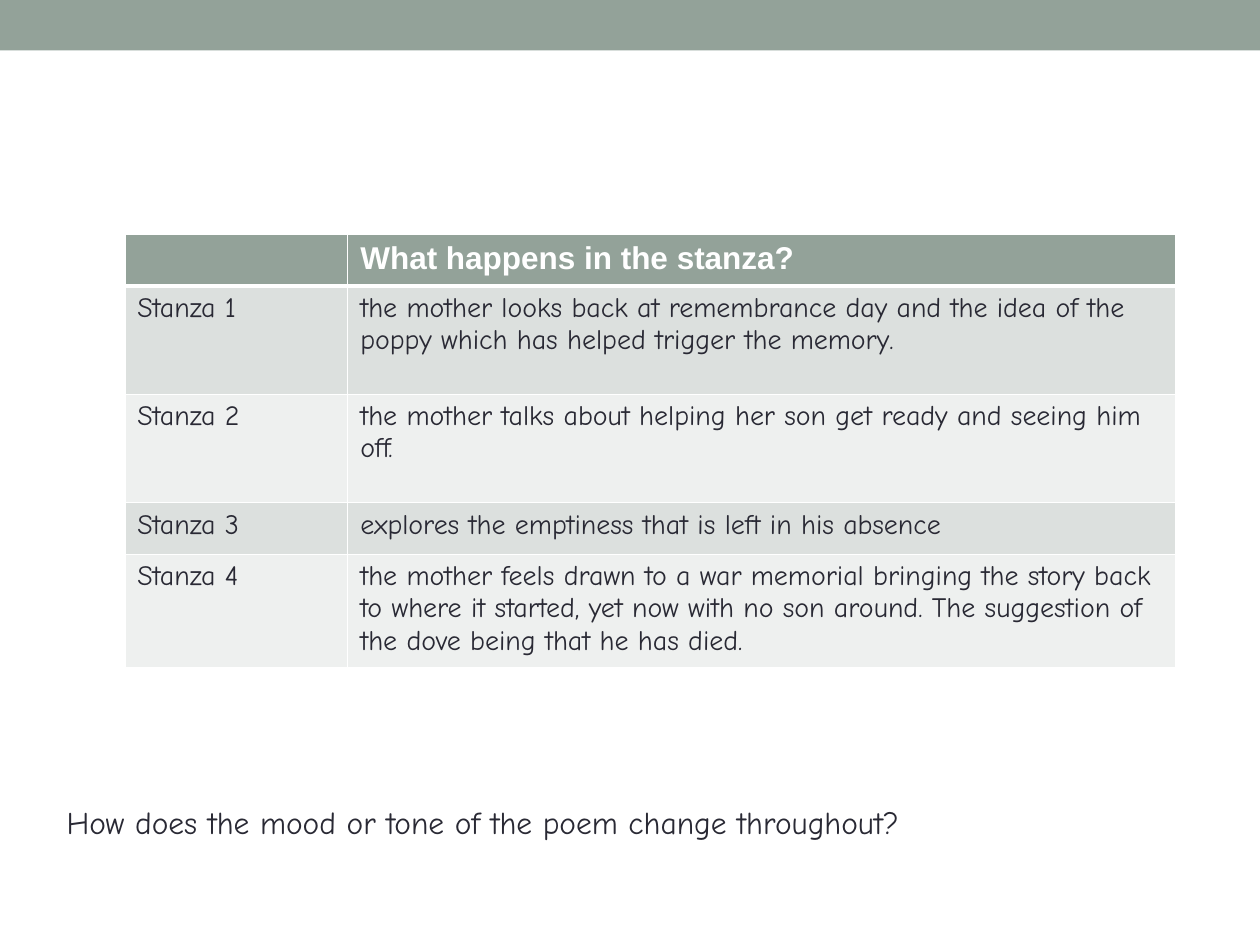
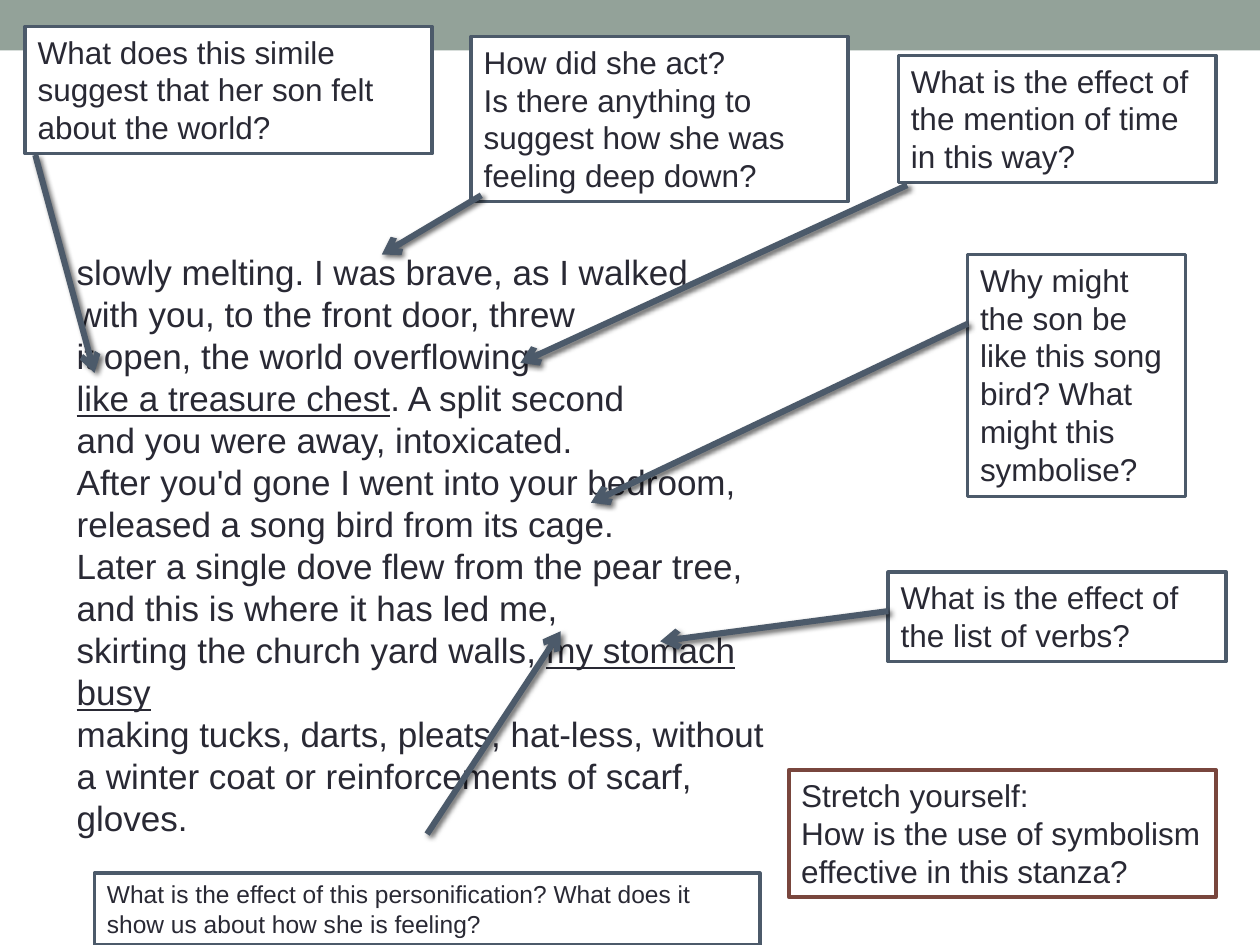
from typing import NamedTuple, Optional

from lxml import etree
from pptx import Presentation
from pptx import util as u
from pptx.dml.color import RGBColor
from pptx.enum import shapes, text
from pptx.oxml import ns

PX = 9144  # EMU per px, 100 px to the inch
SLIDE_W, SLIDE_H = 1000, 750
SAGE, SLATE, RUST, INK, WHITE = "93A299", "4C5A6A", "79463D", "292934", "FFFFFF"
ROW_FILLS = ("DCE0DE", "EEF0EF")
SANS, HAND = "Arial", "Comic Neue"


class Box(NamedTuple):
    x: int
    y: int
    w: int
    h: int

    def emu(self) -> list[u.Emu]:
        return [px(v) for v in self]


class Arrow(NamedTuple):
    x1: int
    y1: int
    x2: int
    y2: int


class Question(NamedTuple):
    words: str
    box: Box
    arrow: Optional[Arrow] = None
    size: int = 18
    line: str = SLATE


class Passage(NamedTuple):
    words: str
    underline: bool = False


STANZAS = [
    ("Stanza 1", "the mother looks back at remembrance day and the idea of the poppy "
                 "which has helped trigger the memory."),
    ("Stanza 2", "the mother talks about helping her son get ready and seeing him off."),
    ("Stanza 3", "explores the emptiness that is left in his absence"),
    ("Stanza 4", "the mother feels drawn to a war memorial bringing the story back to where "
                 "it started, yet now with no son around. The suggestion of the dove being "
                 "that he has died."),
]
TABLE_BOX = Box(99, 186, 834, 340)
COLUMN_WIDTHS = (177, 657)
ROW_HEIGHTS = (41, 86, 86, 41, 86)

POEM = [
    Passage("slowly melting. I was brave, as I walked\nwith you, to the front door, threw\n"
            "it open, the world overflowing\n"),
    Passage("like a treasure chest", True),
    Passage(". A split second\nand you were away, intoxicated.\n"
            "After you'd gone I went into your bedroom,\nreleased a song bird from its cage.\n"
            "Later a single dove flew from the pear tree,\nand this is where it has led me,\n"
            "skirting the church yard walls, "),
    Passage("my stomach busy\n", True),
    Passage("making tucks, darts, pleats, hat-less, without\n"
            "a winter coat or reinforcements of scarf, gloves."),
]

QUESTIONS = [
    Question("What does this simile suggest that her son felt about the world?",
             Box(20, 21, 323, 101), Arrow(28, 123, 75, 296)),
    Question("How did she act?\nIs there anything to suggest how she was feeling deep down?",
             Box(374, 29, 299, 131), Arrow(382, 155, 303, 202)),
    Question("What is the effect of the mention of time in this way?",
             Box(713, 44, 252, 101), Arrow(720, 147, 413, 288)),
    Question("Why might the son be like this song bird? What might this symbolise?",
             Box(768, 202, 173, 192), Arrow(768, 257, 469, 399)),
    Question("What is the effect of the list of verbs?",
             Box(705, 454, 268, 71), Arrow(705, 485, 524, 509)),
    Question("What is the effect of this personification? What does it show us about how "
             "she is feeling?",
             Box(75, 693, 528, 57), Arrow(339, 662, 445, 501), size=14),
    Question("Stretch yourself:\nHow is the use of symbolism effective in this stanza?",
             Box(626, 611, 339, 101), line=RUST),
]


def px(n: int) -> u.Emu:
    return u.Emu(n * PX)


def rgb(value: str) -> RGBColor:
    return RGBColor.from_string(value)


def sub(parent, tag: str, **attrs):
    return etree.SubElement(parent, ns.qn(tag), attrs)


def style(tf, font: str, size: int, color: str = INK, bold: bool = False) -> None:
    for p in tf.paragraphs:
        p.alignment = text.PP_ALIGN.LEFT
        for r in p.runs:
            r.font.name, r.font.size, r.font.bold = font, u.Pt(size), bold
            r.font.color.rgb = rgb(color)


def add_rect(parent, box: Box, fill: str, line: Optional[str] = None):
    sp = parent.add_shape(shapes.MSO_SHAPE.RECTANGLE, *box.emu())
    sp.shadow.inherit = False
    sp.fill.solid()
    sp.fill.fore_color.rgb = rgb(fill)
    if line:
        sp.line.color.rgb = rgb(line)
        sp.line.width = u.Pt(2.08)
    else:
        sp.line.fill.background()
    return sp


def add_body(s, box: Box):
    tf = s.shapes.add_textbox(*box.emu()).text_frame
    tf.word_wrap = True
    return tf


def add_arrow(parent, arrow: Arrow) -> None:
    """Draw a slate arrow with a soft shadow to the lower right."""
    c = parent.add_connector(shapes.MSO_CONNECTOR.STRAIGHT, *[px(v) for v in arrow])
    c.line.color.rgb = rgb(SLATE)
    c.line.width = u.Pt(3.5)
    sub(c.line._get_or_add_ln(), "a:tailEnd", type="arrow")
    effects = sub(c._element.spPr, "a:effectLst")
    shadow = sub(effects, "a:outerShdw", blurRad=str(u.Pt(3)), dist=str(u.Pt(2)),
                 dir=str(45 * 60000), rotWithShape="0")
    sub(sub(shadow, "a:srgbClr", val="000000"), "a:alpha", val="60000")


def add_question(s, q: Question) -> None:
    """Draw a framed question, grouped with its arrow if it has one."""
    parent = s.shapes.add_group_shape().shapes if q.arrow else s.shapes
    tf = add_rect(parent, q.box, WHITE, q.line).text_frame
    tf.word_wrap = True
    tf.auto_size = text.MSO_AUTO_SIZE.SHAPE_TO_FIT_TEXT
    tf.vertical_anchor = text.MSO_ANCHOR.TOP
    tf.text = q.words
    style(tf, SANS, q.size)
    if q.arrow:
        add_arrow(parent, q.arrow)


def fill_cell(cell, words: str, fill: str, header: bool) -> None:
    tc_pr = cell._tc.get_or_add_tcPr()
    for side in "LRTB":
        width = 3 if header and side == "B" else 1
        ln = sub(tc_pr, f"a:ln{side}", w=str(u.Pt(width)))
        sub(sub(ln, "a:solidFill"), "a:srgbClr", val=WHITE)
    cell.fill.solid()
    cell.fill.fore_color.rgb = rgb(fill)
    cell.text_frame.text = words
    if header:
        style(cell.text_frame, SANS, 18, WHITE, bold=True)
    else:
        style(cell.text_frame, HAND, 16)


def add_stanza_table(s) -> None:
    rows = [("", "What happens in the stanza?"), *STANZAS]
    table = s.shapes.add_table(len(rows), len(COLUMN_WIDTHS), *TABLE_BOX.emu()).table
    table.horz_banding = False
    for column, width in zip(table.columns, COLUMN_WIDTHS):
        column.width = px(width)
    for i, (row, height, words) in enumerate(zip(table.rows, ROW_HEIGHTS, rows)):
        row.height = px(height)
        fill = ROW_FILLS[(i - 1) % 2] if i else SAGE
        for cell, value in zip(row.cells, words):
            fill_cell(cell, value, fill, header=i == 0)


def add_poem(s) -> None:
    tf = add_body(s, Box(51, 194, 575, 402))
    p = tf.paragraphs[0]
    for passage in POEM:
        for i, line in enumerate(passage.words.split("\n")):
            if i:
                p.add_line_break()
            if line:
                r = p.add_run()
                r.text = line
                r.font.underline = passage.underline
    style(tf, SANS, 20)


def new_slide(prs):
    """Add a blank slide with the band along its top."""
    s = prs.slides.add_slide(prs.slide_layouts[6])
    add_rect(s.shapes, Box(0, 0, SLIDE_W, 40), SAGE)
    return s


def build_stanza_slide(prs) -> None:
    s = new_slide(prs)
    tf = add_body(s, Box(43, 595, 922, 155))
    tf.margin_top = px(42)
    tf.text = "How does the mood or tone of the poem change throughout?"
    style(tf, HAND, 18)
    add_stanza_table(s)


def build_poem_slide(prs) -> None:
    s = new_slide(prs)
    add_poem(s)
    for question in QUESTIONS:
        add_question(s, question)


def main() -> None:
    prs = Presentation()
    prs.slide_width, prs.slide_height = px(SLIDE_W), px(SLIDE_H)
    build_stanza_slide(prs)
    build_poem_slide(prs)
    prs.save("out.pptx")


if __name__ == "__main__":
    main()
